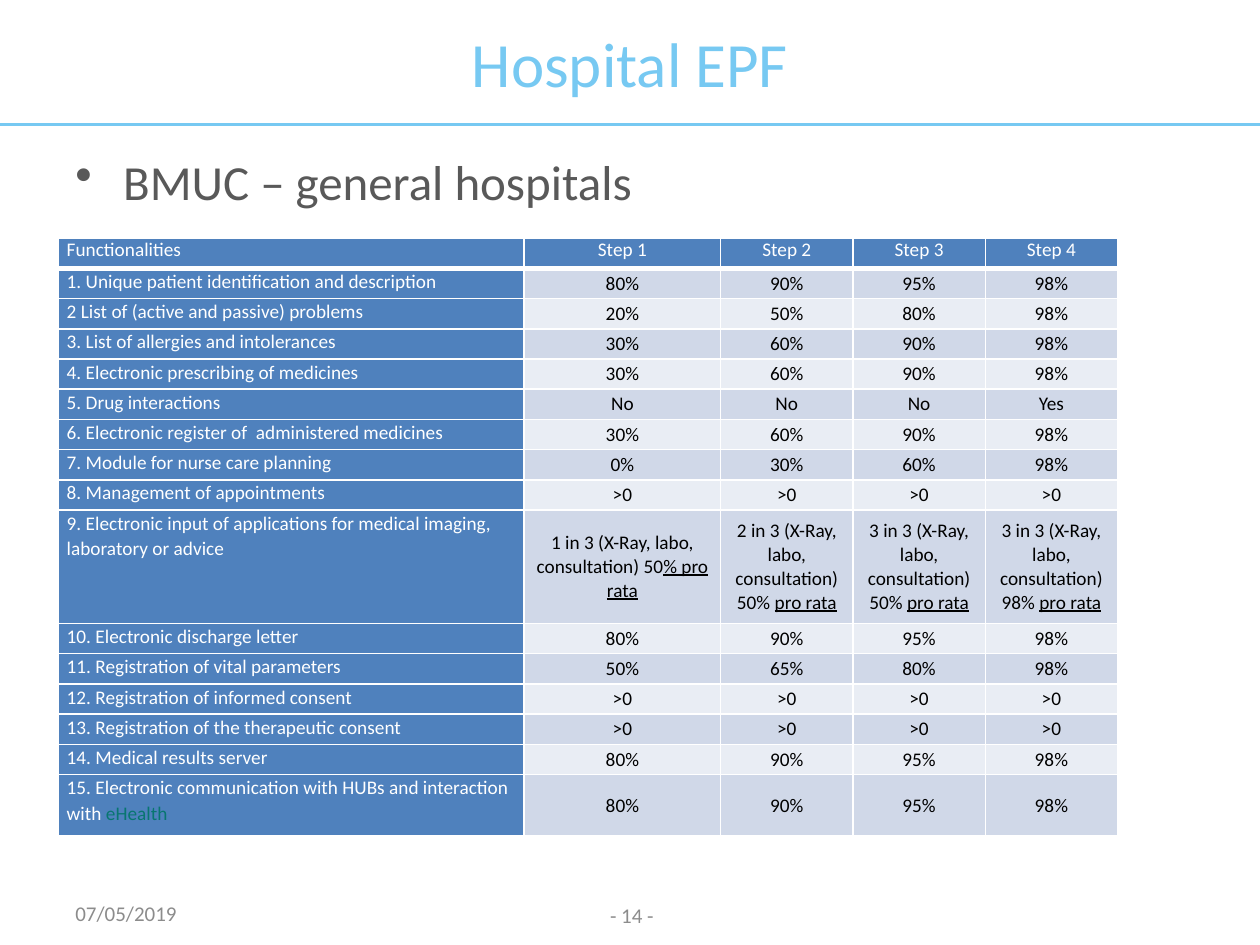
import pptx
import pptx.dml.color
import pptx.enum.shapes
import pptx.enum.text
import pptx.oxml.ns
import pptx.util
from lxml import etree
from pptx.util import Inches

ALIGN = pptx.enum.text.PP_ALIGN
ANCHOR = pptx.enum.text.MSO_ANCHOR
SKY, BLUE, WHITE, BLACK = "77C9F2", "4F81BD", "FFFFFF", "000000"
BANDS = ("D0D8E8", "E9EDF4")

COLUMNS = [3.7, 1.56, 1.05, 1.05, 1.05]
ROW, ROW_IMAGING, ROW_LAST = 0.24, 0.9, 0.49


def pro_rata(lead, underlined="pro rata"):
    return [(lead, {}), (underlined, {"underline": True})]


ROWS = [
    ["Functionalities", "Step 1", "Step 2", "Step 3", "Step 4"],
    ["1. Unique patient identification and description", "80%", "90%", "95%", "98%"],
    ["2 List of (active and passive) problems", "20%", "50%", "80%", "98%"],
    ["3. List of allergies and intolerances", "30%", "60%", "90%", "98%"],
    ["4. Electronic prescribing of medicines", "30%", "60%", "90%", "98%"],
    ["5. Drug interactions", "No", "No", "No", "Yes"],
    ["6. Electronic register of  administered medicines", "30%", "60%", "90%", "98%"],
    ["7. Module for nurse care planning", "0%", "30%", "60%", "98%"],
    ["8. Management of appointments", ">0", ">0", ">0", ">0"],
    ["9. Electronic input of applications for medical imaging, laboratory or advice",
     pro_rata("1 in 3 (X-Ray, labo, consultation) 50", "% pro rata"),
     pro_rata("2 in 3 (X-Ray, labo, consultation) 50% "),
     pro_rata("3 in 3 (X-Ray, labo, consultation) 50% "),
     pro_rata("3 in 3 (X-Ray, labo, consultation) 98% ")],
    ["10. Electronic discharge letter", "80%", "90%", "95%", "98%"],
    ["11. Registration of vital parameters", "50%", "65%", "80%", "98%"],
    ["12. Registration of informed consent", ">0", ">0", ">0", ">0"],
    ["13. Registration of the therapeutic consent", ">0", ">0", ">0", ">0"],
    ["14. Medical results server", "80%", "90%", "95%", "98%"],
    [[("15. Electronic communication with HUBs and interaction with ", {}),
      ("eHealth", {"color": "087670"})], "80%", "90%", "95%", "98%"],
]
HEIGHTS = [ROW] * 9 + [ROW_IMAGING] + [ROW] * 5 + [ROW_LAST]


def rgb(value):
    return pptx.dml.color.RGBColor.from_string(value)


def write(tf, text, size, color, font, align=ALIGN.LEFT, after=0, spacing=None, bullet=None):
    """Fill a frame with a string, or with (text, run format) pairs."""
    tf.word_wrap = True
    p = tf.paragraphs[0]
    p.alignment = align
    p.space_after = pptx.util.Pt(after)
    if spacing:
        p.line_spacing = spacing
    if bullet:
        pPr = p._p.get_or_add_pPr()
        pPr.set("marL", str(Inches(0.38)))
        pPr.set("indent", str(-Inches(0.38)))
        etree.SubElement(pPr, pptx.oxml.ns.qn("a:buChar")).set("char", bullet)
    for part, style in [(text, {})] if isinstance(text, str) else text:
        r = p.add_run()
        r.text = part
        r.font.name = font
        r.font.size = pptx.util.Pt(size)
        r.font.color.rgb = rgb(style.get("color", color))
        if style.get("underline"):
            r.font.underline = True


def border(cell, bottom=1):
    """Add white cell borders; call before filling, as the schema orders them."""
    qn = pptx.oxml.ns.qn
    tcPr = cell._tc.get_or_add_tcPr()
    for side, width in (("L", 1), ("R", 1), ("T", 1), ("B", bottom)):
        ln = etree.SubElement(tcPr, qn("a:ln" + side), w=str(pptx.util.Pt(width)))
        fill = etree.SubElement(ln, qn("a:solidFill"))
        etree.SubElement(fill, qn("a:srgbClr"), val=WHITE)


class Deck:
    font = "Calibri"

    def __init__(self):
        self.prs = pptx.Presentation()
        self.prs.slide_width = Inches(10)
        self.prs.slide_height = Inches(7.5)
        self.s = self.prs.slides.add_slide(self.prs.slide_layouts[6])

    def text(self, x, y, w, h, text, anchor=ANCHOR.MIDDLE, **style):
        sp = self.s.shapes.add_textbox(Inches(x), Inches(y), Inches(w), Inches(h))
        sp.text_frame.vertical_anchor = anchor
        write(sp.text_frame, text, font=self.font, **style)

    def rule(self, y):
        line = self.s.shapes.add_connector(
            pptx.enum.shapes.MSO_CONNECTOR.STRAIGHT,
            0, Inches(y), self.prs.slide_width, Inches(y))
        line.line.color.rgb = rgb(SKY)
        line.line.width = pptx.util.Pt(1.5)
        etree.SubElement(line._element.spPr, pptx.oxml.ns.qn("a:effectLst"))

    def table(self, x, y, rows, widths, heights):
        table = self.s.shapes.add_table(
            len(rows), len(widths), Inches(x), Inches(y),
            Inches(sum(widths)), Inches(sum(heights))).table
        for column, width in zip(table.columns, widths):
            column.width = Inches(width)
        for i, (row, height) in enumerate(zip(rows, heights)):
            table.rows[i].height = Inches(height)
            for j, text in enumerate(row):
                self.cell(table.cell(i, j), text, i, j)

    def cell(self, cell, text, i, j):
        header, label = i == 0, j == 0
        dark = header or label
        cell.margin_left = cell.margin_right = Inches(0.07)
        cell.margin_top = cell.margin_bottom = 0
        cell.vertical_anchor = ANCHOR.TOP if dark else ANCHOR.MIDDLE
        border(cell, bottom=3 if header else 1)
        cell.fill.solid()
        cell.fill.fore_color.rgb = rgb(BLUE if dark else BANDS[(i - 1) % 2])
        write(cell.text_frame, text, size=11, font=self.font, after=2,
              color=WHITE if dark else BLACK,
              align=ALIGN.LEFT if label else ALIGN.CENTER,
              spacing=1.07 if label and not header else None)


def main():
    deck = Deck()
    deck.rule(0.99)
    deck.text(0, 0, 10, 0.99, "Hospital EPF", size=36, color=SKY, align=ALIGN.CENTER)
    deck.text(0.5, 1.15, 9, 5.75, "BMUC – general hospitals", anchor=ANCHOR.TOP,
              size=28, color="595959", bullet="•")
    deck.table(0.46, 1.89, ROWS, COLUMNS, HEIGHTS)
    deck.text(0.5, 7.05, 2.33, 0.4, "07/05/2019", size=12, color="8C8C8C")
    deck.text(3.85, 7.06, 2.33, 0.4, "- 14 -", size=12, color="8C8C8C", align=ALIGN.CENTER)
    deck.prs.save("out.pptx")


if __name__ == "__main__":
    main()
